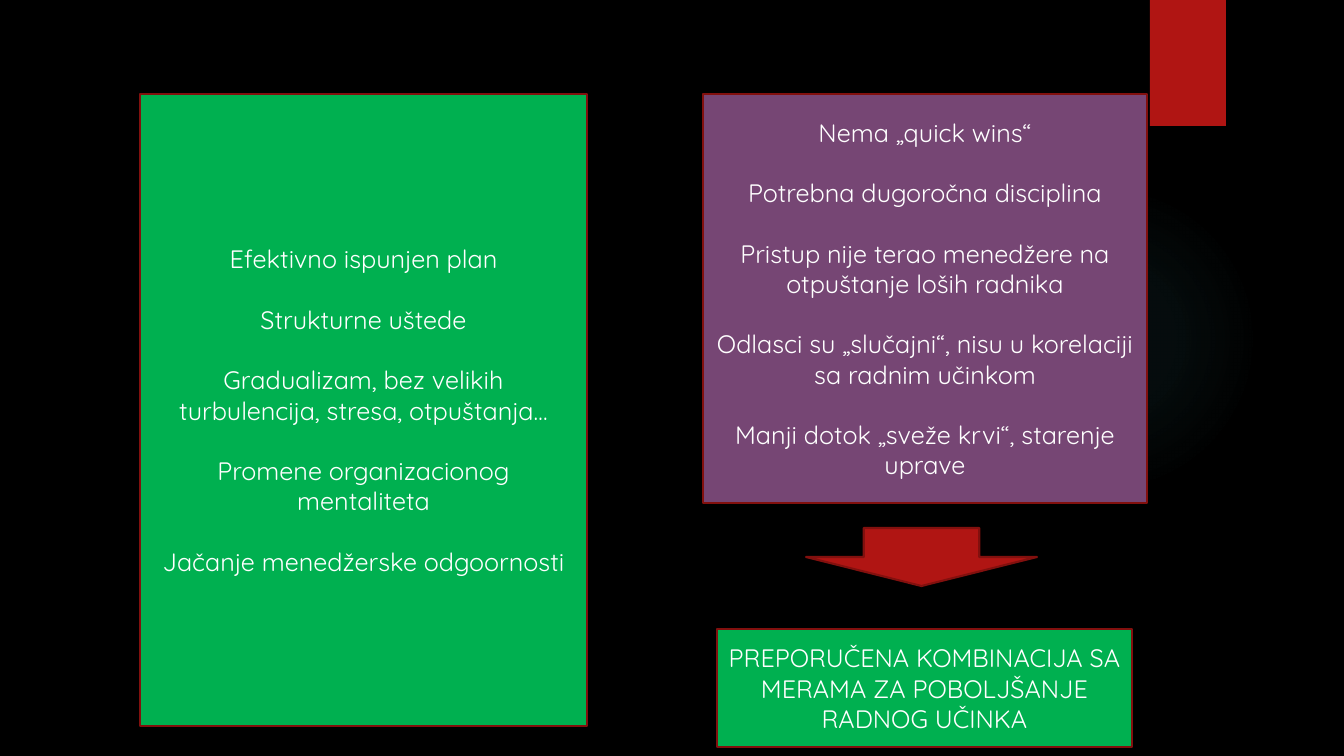
from dataclasses import dataclass

from pptx import Presentation
from pptx.dml.color import RGBColor
from pptx.enum.shapes import MSO_SHAPE
from pptx.enum.text import MSO_ANCHOR, PP_ALIGN
from pptx.oxml import parse_xml
from pptx.oxml.ns import nsdecls
from pptx.util import Emu, Pt

SLIDE_W, SLIDE_H = 1344, 756
EMU_PER_PX = 12192000 / SLIDE_W


@dataclass(frozen=True)
class Theme:
    background: str = "000000"
    text: str = "FFFFFF"
    green: str = "00B050"
    purple: str = "764674"
    red: str = "B01513"
    outline: str = "82100E"
    glow: str = "50B9C1"
    font: str = "Quicksand"
    size: float = 18
    gap: float = 21.6
    line: float = 1.5


THEME = Theme()

ACHIEVEMENTS = [
    "Efektivno ispunjen plan",
    "Strukturne uštede",
    "Gradualizam, bez velikih turbulencija, stresa, otpuštanja…",
    "Promene organizacionog mentaliteta",
    "Jačanje menedžerske odgoornosti",
]
DRAWBACKS = [
    "Nema „quick wins“",
    "Potrebna dugoročna disciplina",
    "Pristup nije terao menedžere na otpuštanje loših radnika",
    "Odlasci su „slučajni“, nisu u korelaciji sa radnim učinkom",
    "Manji dotok „sveže krvi“, starenje uprave",
]
RECOMMENDATION = ["PREPORUČENA KOMBINACIJA SA MERAMA ZA POBOLJŠANJE RADNOG UČINKA"]


def px(n):
    return Emu(round(n * EMU_PER_PX))


def rgb(value):
    return RGBColor.from_string(value)


def add_shape(slide, kind, box, fill=None, line=None):
    sp = slide.shapes.add_shape(kind, *map(px, box))
    sp.shadow.inherit = False
    if fill:
        sp.fill.solid()
        sp.fill.fore_color.rgb = rgb(fill)
    if line:
        sp.line.color.rgb = rgb(line)
        sp.line.width = Pt(THEME.line)
    else:
        sp.line.fill.background()
    return sp


def add_glow(slide, box):
    sp = add_shape(slide, MSO_SHAPE.OVAL, box)
    stops = "".join(
        f'<a:gs pos="{pos * 1000}"><a:srgbClr val="{THEME.glow}">'
        f'<a:alpha val="{alpha * 1000}"/></a:srgbClr></a:gs>'
        for pos, alpha in [(0, 7), (36, 6), (69, 0)]
    )
    grad = parse_xml(
        f'<a:gradFill {nsdecls("a")}><a:gsLst>{stops}</a:gsLst><a:path path="circle">'
        '<a:fillToRect l="50000" t="50000" r="50000" b="50000"/></a:path></a:gradFill>'
    )
    sp._element.spPr.insert(2, grad)


def write(p, text, *, font=THEME.font, size=THEME.size, color=THEME.text,
          align=PP_ALIGN.CENTER, before=0):
    p.alignment = align
    if before:
        p.space_before = Pt(before)
    r = p.add_run()
    r.text = text
    r.font.name = font
    r.font.size = Pt(size)
    r.font.color.rgb = rgb(color)


def add_panel(slide, box, fill, lines):
    sp = add_shape(slide, MSO_SHAPE.RECTANGLE, box, fill, THEME.outline)
    tf = sp.text_frame
    tf.word_wrap = True
    tf.vertical_anchor = MSO_ANCHOR.MIDDLE
    for i, line in enumerate(lines):
        p = tf.add_paragraph() if i else tf.paragraphs[0]
        write(p, line, before=THEME.gap if i else 0)


def main():
    prs = Presentation()
    prs.slide_width, prs.slide_height = px(SLIDE_W), px(SLIDE_H)
    slide = prs.slides.add_slide(prs.slide_layouts[6])
    slide.background.fill.solid()
    slide.background.fill.fore_color.rgb = rgb(THEME.background)

    add_glow(slide, (949, 184, 310, 310))
    add_shape(slide, MSO_SHAPE.RECTANGLE, (1150, 0, 76, 126), THEME.red)
    add_panel(slide, (140, 94, 447, 632), THEME.green, ACHIEVEMENTS)
    add_panel(slide, (703, 94, 444, 409), THEME.purple, DRAWBACKS)
    add_shape(slide, MSO_SHAPE.DOWN_ARROW, (806, 528, 231, 58), THEME.red, THEME.outline)
    add_panel(slide, (717, 629, 415, 118), THEME.green, RECOMMENDATION)

    prs.save("out.pptx")


if __name__ == "__main__":
    main()
